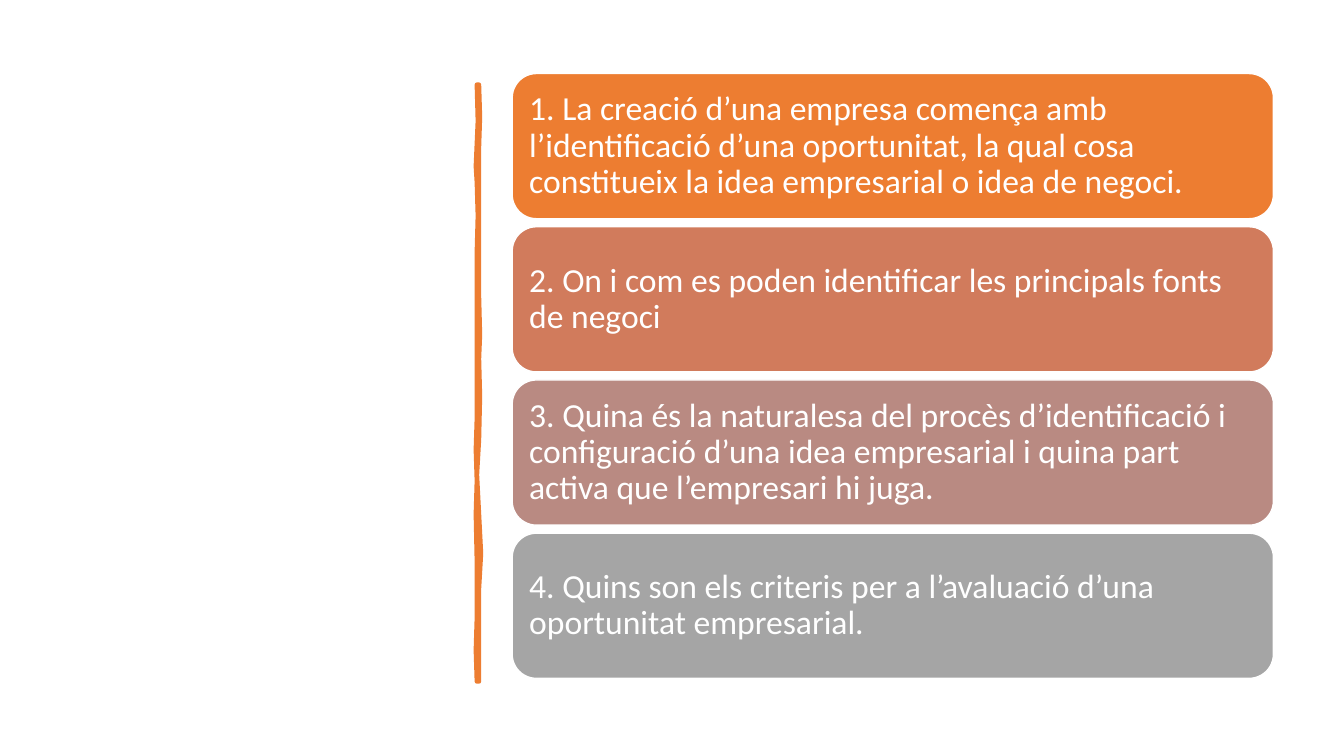
from pptx import Presentation
from pptx.dml.color import RGBColor
from pptx.enum import shapes, text
from pptx.util import Inches, Pt

COLORS = {"orange": "ED7D31", "white": "FFFFFF"}
TOPICS = [
    ("ED7D31", "1. La creació d’una empresa comença amb l’identificació d’una oportunitat, "
               "la qual cosa constitueix la idea empresarial o idea de negoci."),
    ("D17B5C", "2. On i com es poden identificar les principals fonts de negoci"),
    ("B98A82", "3. Quina és la naturalesa del procès d’identificació i configuració d’una "
               "idea empresarial i quina part activa que l’empresari hi juga."),
    ("A5A5A5", "4. Quins son els criteris per a l’avaluació d’una oportunitat empresarial."),
]
CARD_LEFT, CARD_TOP, CARD_W, CARD_H, CARD_STEP = 5.08, 0.73, 7.55, 1.44, 1.52
CARD_FONT = {"name": "Calibri", "size": Pt(24)}
MARGINS = ("margin_left", "margin_top", "margin_right", "margin_bottom")

# Outline of the hand-drawn rule: down the right edge, then up the left
RULE_OUTLINE = [
    (4.75, 0.84), (4.76, 1.16), (4.75, 1.46), (4.75, 1.84), (4.75, 2.26),
    (4.75, 2.94), (4.76, 3.32), (4.75, 3.56), (4.76, 3.93), (4.75, 4.36),
    (4.73, 4.71), (4.75, 5.1), (4.77, 5.49), (4.75, 5.84), (4.75, 6.76),
    (4.73, 6.76), (4.72, 6.45), (4.73, 6.13), (4.73, 5.57), (4.72, 5.1),
    (4.73, 4.77), (4.72, 4.46), (4.73, 4.15), (4.73, 3.35), (4.73, 2.5),
    (4.74, 2.14), (4.73, 1.81), (4.72, 1.65), (4.74, 1.2), (4.73, 0.84),
]


def paint(sp, fill, line, width):
    sp.shadow.inherit = False
    sp.fill.solid()
    sp.fill.fore_color.rgb = RGBColor.from_string(fill)
    sp.line.color.rgb = RGBColor.from_string(line)
    sp.line.width = Pt(width)


def add_rule(s):
    start, *points = [(Inches(x), Inches(y)) for x, y in RULE_OUTLINE]
    builder = s.shapes.build_freeform(*start)
    builder.add_line_segments(points, close=True)
    paint(builder.convert_to_shape(), COLORS["orange"], COLORS["orange"], 3.25)


def add_card(s, top, fill, wording):
    sp = s.shapes.add_shape(shapes.MSO_SHAPE.ROUNDED_RECTANGLE, Inches(CARD_LEFT),
                            Inches(top), Inches(CARD_W), Inches(CARD_H))
    paint(sp, fill, COLORS["white"], 1)
    tf = sp.text_frame
    tf.word_wrap = True
    tf.vertical_anchor = text.MSO_ANCHOR.MIDDLE
    for margin in MARGINS:
        setattr(tf, margin, Inches(0.1))
    p = tf.paragraphs[0]
    p.alignment = text.PP_ALIGN.LEFT
    p.line_spacing = 0.9
    r = p.add_run()
    r.text = wording
    for key, value in CARD_FONT.items():
        setattr(r.font, key, value)
    r.font.color.rgb = RGBColor.from_string(COLORS["white"])


def main():
    prs = Presentation()
    prs.slide_width, prs.slide_height = Inches(13.33), Inches(7.5)
    s = prs.slides.add_slide(prs.slide_layouts[6])
    add_rule(s)
    for i, (fill, wording) in enumerate(TOPICS):
        add_card(s, CARD_TOP + i * CARD_STEP, fill, wording)
    prs.save("out.pptx")


if __name__ == "__main__":
    main()
